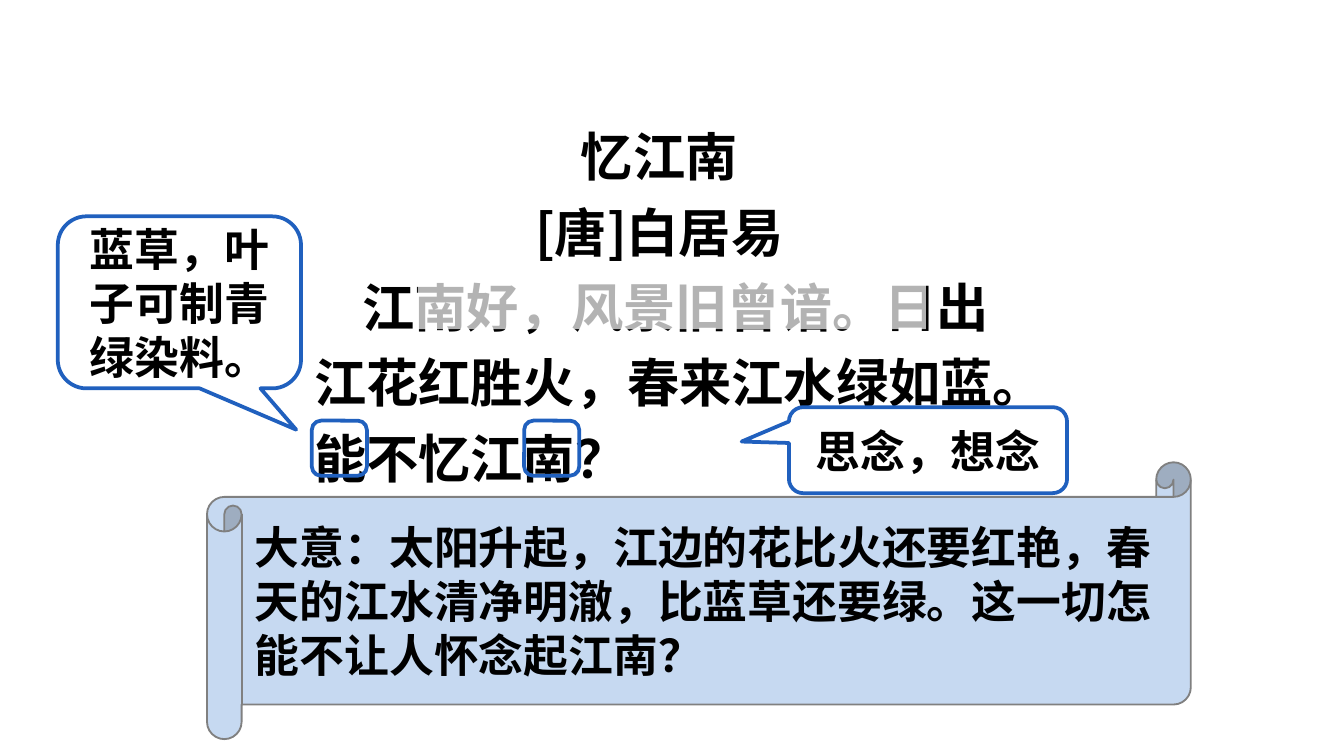
from lxml import etree
from pptx import Presentation
from pptx.dml.color import RGBColor
from pptx.enum.shapes import MSO_SHAPE
from pptx.enum.text import MSO_ANCHOR, MSO_AUTO_SIZE, PP_ALIGN
from pptx.oxml.ns import qn
from pptx.util import Inches, Pt

RECTANGLE = MSO_SHAPE.RECTANGLE
ROUNDED = MSO_SHAPE.ROUNDED_RECTANGLE
CALLOUT = MSO_SHAPE.ROUNDED_RECTANGULAR_CALLOUT
SCROLL = MSO_SHAPE.HORIZONTAL_SCROLL
MIDDLE = MSO_ANCHOR.MIDDLE
GROW = MSO_AUTO_SIZE.SHAPE_TO_FIT_TEXT
LEFT, CENTER = PP_ALIGN.LEFT, PP_ALIGN.CENTER

WHITE = RGBColor(0xFF, 0xFF, 0xFF)
BLACK = RGBColor(0, 0, 0)
BLUE = RGBColor(0x20, 0x60, 0xBE)
PALE_BLUE = RGBColor(0xC6, 0xD9, 0xF1)
GRAY = RGBColor(0x80, 0x80, 0x80)
FONT = "Noto Sans CJK SC"

MARK_SIZE = 0.41


def add_box(slide, preset, box, fill=None, line=None, weight=2):
    shape = slide.shapes.add_shape(preset, *(Inches(length) for length in box))
    shape.shadow.inherit = False
    if fill is None:
        shape.fill.background()
    else:
        shape.fill.solid()
        shape.fill.fore_color.rgb = fill
    if line is None:
        shape.line.fill.background()
    else:
        shape.line.color.rgb = line
        shape.line.width = Pt(weight)
    frame = shape.text_frame
    frame.word_wrap = True
    frame.vertical_anchor = MIDDLE
    return shape


def add_text(paragraph, text, size, align):
    paragraph.alignment = align
    run = paragraph.add_run()
    run.text = text
    font = run.font
    font.size = Pt(size)
    font.bold = True
    font.color.rgb = BLACK
    font.name = FONT
    etree.SubElement(font._element, qn("a:ea"), typeface=FONT)


def add_poem(slide, box):
    poem = add_box(slide, RECTANGLE, box, WHITE)
    frame = poem.text_frame
    frame.auto_size = GROW
    lines = [
        ("忆江南", CENTER),
        ("[唐]白居易", CENTER),
        ("江南好，风景旧曾谙。日出江花红胜火，春来江水绿如蓝。能不忆江南？", LEFT),
    ]
    for index, (text, align) in enumerate(lines):
        paragraph = frame.add_paragraph() if index else frame.paragraphs[0]
        paragraph.line_spacing = 1.2
        add_text(paragraph, text, 28, align)
    paragraph._p.get_or_add_pPr().set("indent", str(Inches(0.36)))

    left, top = box[:2]
    veil = add_box(slide, RECTANGLE, (left + 0.87, top + 1.23, 3.78, 0.45), WHITE)
    color = veil.fill._xPr.find(qn("a:solidFill"))[0]
    etree.SubElement(color, qn("a:alpha"), val="70000")


def add_word_mark(slide, left, top):
    add_box(slide, ROUNDED, (left, top, MARK_SIZE, MARK_SIZE), line=BLUE)


def add_word_note(slide, box, text, tip):
    note = add_box(slide, CALLOUT, box, WHITE, BLUE)
    note.adjustments[0], note.adjustments[1] = tip
    add_text(note.text_frame.paragraphs[0], text, 24, CENTER)


def add_meaning(slide, box, text):
    scroll = add_box(slide, SCROLL, box, PALE_BLUE, GRAY, 1)
    add_text(scroll.text_frame.paragraphs[0], text, 24, LEFT)


def main():
    deck = Presentation()
    deck.slide_width = Inches(10)
    deck.slide_height = deck.slide_width * 9 // 16
    slide = deck.slides.add_slide(deck.slide_layouts[6])

    add_poem(slide, (2.24, 0.77, 5.33, 2.93))
    add_word_mark(slide, 2.32, 3.13)
    add_word_note(slide, (0.43, 1.61, 1.81, 1.28), "蓝草，叶子可制青绿染料。", (0.48, 0.74))
    add_meaning(
        slide,
        (1.54, 3.44, 7.32, 2.06),
        "大意：太阳升起，江边的花比火还要红艳，春天的江水清净明澈，"
        "比蓝草还要绿。这一切怎能不让人怀念起江南？",
    )
    add_word_mark(slide, 3.9, 3.13)
    add_word_note(slide, (5.87, 3.03, 2.07, 0.64), "思念，想念", (-0.67, -0.1))

    deck.save("out.pptx")


if __name__ == "__main__":
    main()
